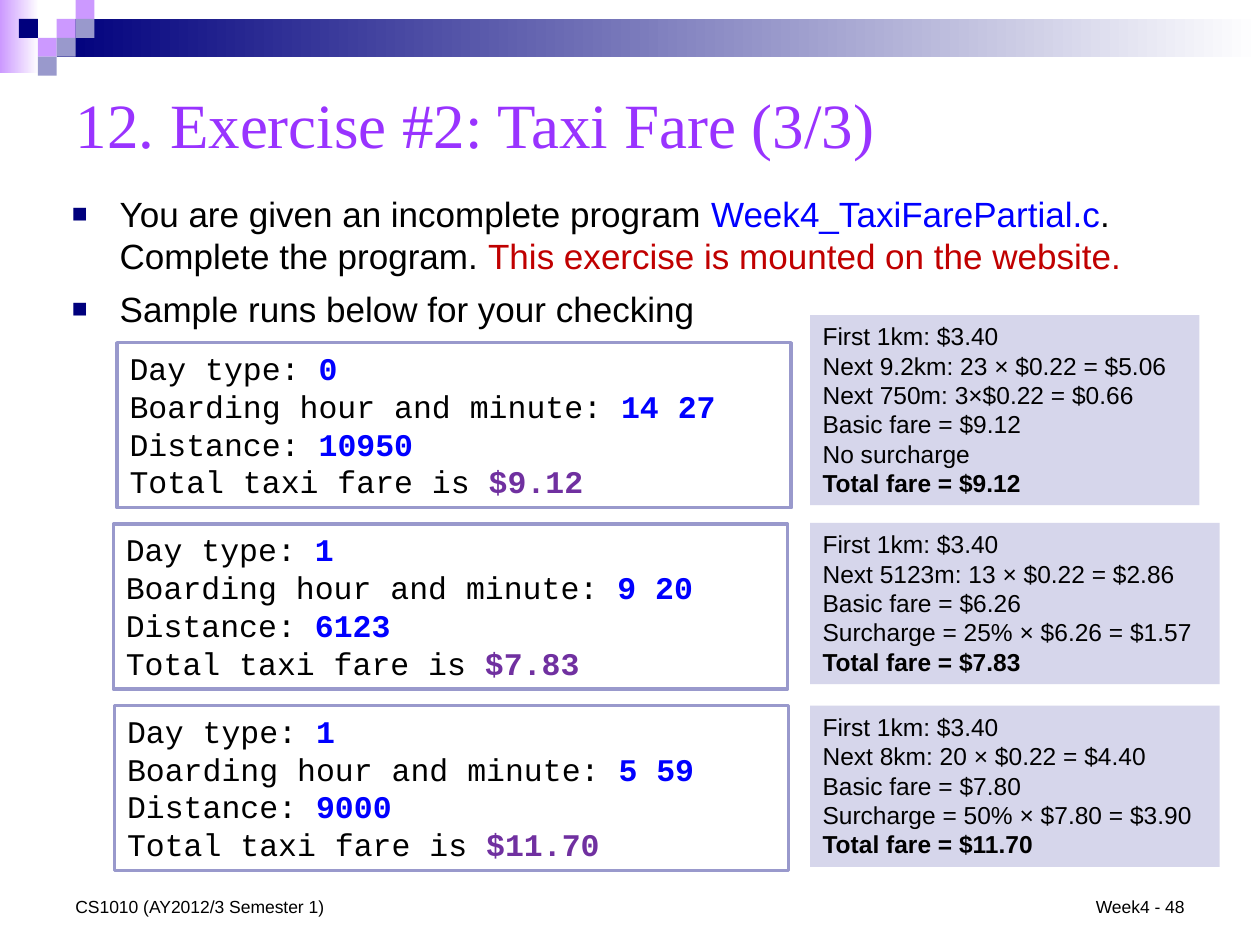
from dataclasses import dataclass

from lxml import etree
from pptx import Presentation
from pptx.dml.color import RGBColor
from pptx.enum import shapes, text
from pptx.oxml import ns
from pptx.util import Inches, Pt

COLORS = {
    "black": "000000", "white": "FFFFFF", "navy": "00007D", "lilac": "CC99FF",
    "slate": "9999CC", "pale": "D6D6EB", "title": "9933FF", "blue": "0000FF",
    "red": "C00000", "purple": "7030A0",
}


@dataclass
class Box:
    left: float
    top: float
    width: float
    height: float


@dataclass
class Run:
    words: str
    color: str = "black"
    bold: bool = False


@dataclass
class Sample:
    run_box: Box
    day: str
    time: str
    distance: str
    fare: str
    work_box: Box
    working: list[str]


def rgb(name: str) -> RGBColor:
    return RGBColor.from_string(COLORS[name])


def place(shape, box: Box) -> None:
    shape.left, shape.top = Inches(box.left), Inches(box.top)
    shape.width, shape.height = Inches(box.width), Inches(box.height)


def add_rectangle(slide, box: Box, fill: str, fade: bool = False):
    shape = slide.shapes.add_shape(
        shapes.MSO_SHAPE.RECTANGLE, Inches(box.left), Inches(box.top),
        Inches(box.width), Inches(box.height))
    shape.shadow.inherit = False
    shape.line.fill.background()
    if fade:
        shape.fill.gradient()
        shape.fill.gradient_angle = 0
        for stop, color in zip(shape.fill.gradient_stops, (fill, "white")):
            stop.color.rgb = rgb(color)
    else:
        shape.fill.solid()
        shape.fill.fore_color.rgb = rgb(fill)
    return shape


def write(shape, lines: list[list[Run]], font: str, size: float,
          align=text.PP_ALIGN.LEFT, anchor=text.MSO_ANCHOR.TOP) -> None:
    frame = shape.text_frame
    frame.word_wrap = True
    frame.vertical_anchor = anchor
    for index, line in enumerate(lines):
        paragraph = frame.paragraphs[0] if index == 0 else frame.add_paragraph()
        paragraph.alignment = align
        paragraph.font.name, paragraph.font.size = font, Pt(size)
        for part in line:
            run = paragraph.add_run()
            run.text = part.words
            run.font.color.rgb = rgb(part.color)
            if part.bold:
                run.font.bold = True


def add_square_bullet(paragraph) -> None:
    properties = paragraph._p.get_or_add_pPr()
    properties.set("marL", str(Inches(0.38)))
    properties.set("indent", str(Inches(-0.38)))
    paragraph.space_before = Pt(6)
    bullet = [etree.Element(ns.qn(tag)) for tag in
              ("a:buClr", "a:buSzPct", "a:buFont", "a:buChar")]
    color, size, font, character = bullet
    etree.SubElement(color, ns.qn("a:srgbClr")).set("val", COLORS["navy"])
    size.set("val", "75000")
    font.set("typeface", "Arial")
    character.set("char", "■")
    # Bullet settings go before the paragraph's default run properties
    default_run = properties.find(ns.qn("a:defRPr"))
    for element in bullet:
        default_run.addprevious(element)


def add_sample(slide, sample: Sample) -> None:
    screen = add_rectangle(slide, sample.run_box, "white")
    screen.line.color.rgb = rgb("slate")
    screen.line.width = Pt(2)
    write(screen, [
        [Run("Day type: "), Run(sample.day, "blue", True)],
        [Run("Boarding hour and minute: "), Run(sample.time, "blue", True)],
        [Run("Distance: "), Run(sample.distance, "blue", True)],
        [Run("Total taxi fare is "), Run(sample.fare, "purple", True)],
    ], "Courier New", 18)

    lines = [[Run(line)] for line in ["First 1km: $3.40", *sample.working]]
    lines.append([Run(f"Total fare = {sample.fare}", bold=True)])
    write(add_rectangle(slide, sample.work_box, "pale"), lines, "Arial", 14)


def add_footer(slide, box: Box, words: str, align) -> None:
    footer = slide.shapes.add_textbox(0, 0, 0, 0)
    place(footer, box)
    write(footer, [[Run(words)]], "Arial", 10, align, text.MSO_ANCHOR.BOTTOM)


SAMPLES = [
    Sample(Box(0.93, 2.72, 5.35, 1.31), "0", "14 27", "10950", "$9.12",
           Box(6.43, 2.5, 3.09, 1.51),
           ["Next 9.2km: 23 × $0.22 = $5.06", "Next 750m: 3×$0.22 = $0.66",
            "Basic fare = $9.12", "No surcharge"]),
    Sample(Box(0.9, 4.16, 5.35, 1.31), "1", "9 20", "6123", "$7.83",
           Box(6.43, 4.15, 3.25, 1.28),
           ["Next 5123m: 13 × $0.22 = $2.86", "Basic fare = $6.26",
            "Surcharge = 25% × $6.26 = $1.57"]),
    Sample(Box(0.91, 5.6, 5.35, 1.31), "1", "5 59", "9000", "$11.70",
           Box(6.43, 5.6, 3.25, 1.28),
           ["Next 8km: 20 × $0.22 = $4.40", "Basic fare = $7.80",
            "Surcharge = 50% × $7.80 = $3.90"]),
]

# Column, row and colour of each square in the corner mosaic
MOSAIC = [(3, 1, "lilac"), (4, 0, "lilac"), (4, 1, "slate"), (2, 2, "lilac"),
          (1, 1, "navy"), (3, 2, "slate"), (2, 3, "slate")]
SQUARE = 0.15


def main() -> None:
    presentation = Presentation()
    presentation.slide_width, presentation.slide_height = Inches(10), Inches(7.5)
    slide = presentation.slides.add_slide(presentation.slide_layouts[1])

    # Header band and mosaic
    add_rectangle(slide, Box(0, 0, 0.31, 0.58), "lilac", fade=True)
    add_rectangle(slide, Box(0.45, 0.15, 9.55, 0.3), "navy", fade=True)
    for column, row, color in MOSAIC:
        add_rectangle(slide, Box(column * SQUARE, row * SQUARE, SQUARE, SQUARE), color)

    # Title and instructions
    title, body = slide.shapes.title, slide.placeholders[1]
    place(title, Box(0.5, 0.5, 9.33, 0.95))
    write(title, [[Run("12. Exercise #2: Taxi Fare (3/3)", "title")]],
          "Times New Roman", 36, anchor=text.MSO_ANCHOR.MIDDLE)
    place(body, Box(0.47, 1.48, 9, 0.92))
    write(body, [
        [Run("You are given an incomplete program "),
         Run("Week4_TaxiFarePartial.c", "blue"),
         Run(". Complete the program. "),
         Run("This exercise is mounted on the website.", "red")],
        [Run("Sample runs below for your checking")],
    ], "Arial", 20)
    body.text_frame.auto_size = text.MSO_AUTO_SIZE.NONE
    for paragraph in body.text_frame.paragraphs:
        add_square_bullet(paragraph)

    # Footer
    add_footer(slide, Box(7.17, 6.83, 2.33, 0.5), "Week4 - 48", text.PP_ALIGN.RIGHT)
    add_footer(slide, Box(0.5, 6.83, 3.17, 0.5), "CS1010 (AY2012/3 Semester 1)",
               text.PP_ALIGN.LEFT)

    # Sample runs with their workings
    for sample in SAMPLES:
        add_sample(slide, sample)

    presentation.save("out.pptx")


if __name__ == "__main__":
    main()
